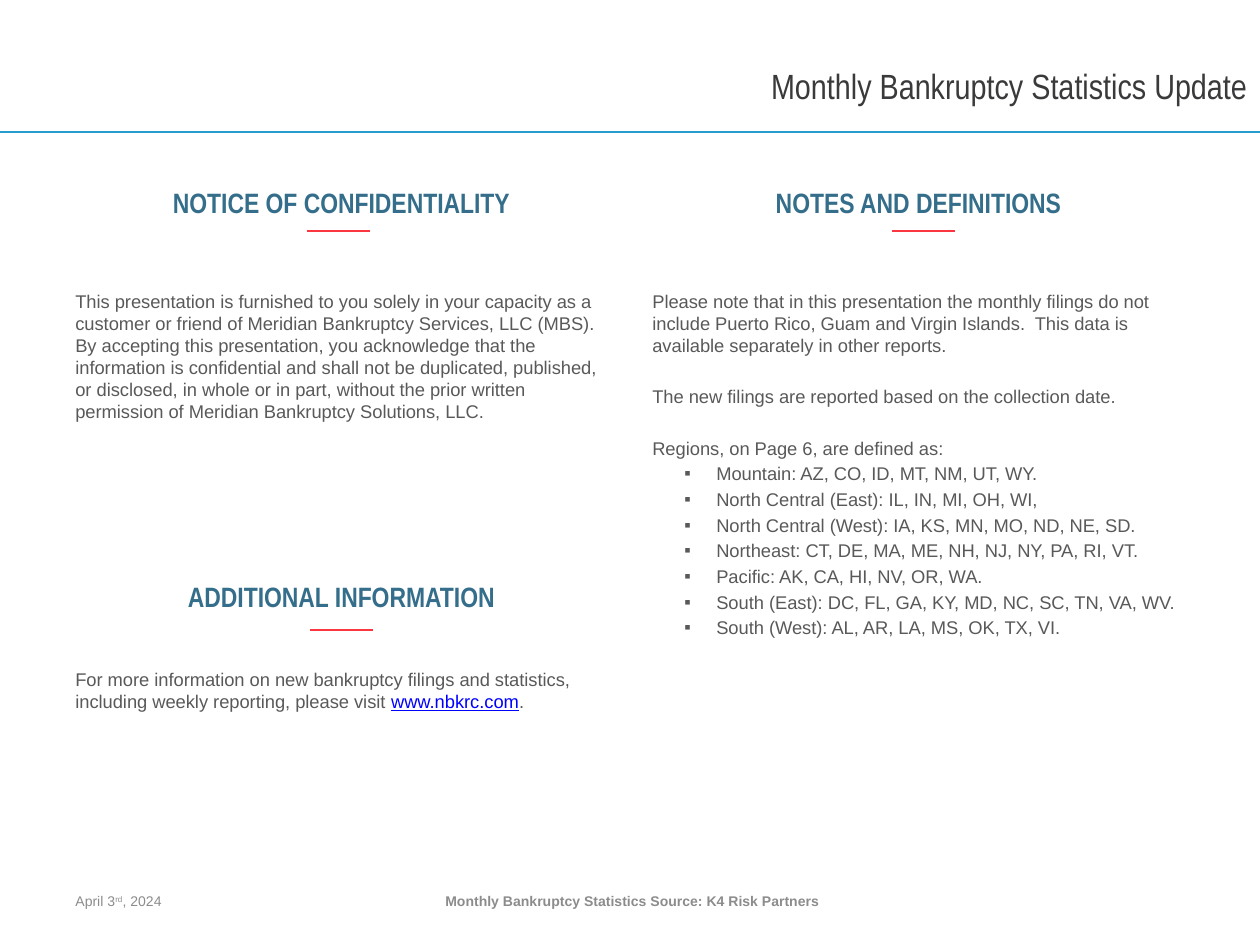
"""Build the notices and definitions slide of the bankruptcy statistics deck."""
from lxml.etree import SubElement
from pptx import Presentation
from pptx.dml.color import RGBColor
from pptx.enum.shapes import MSO_CONNECTOR
from pptx.enum.text import MSO_ANCHOR as Anchor, MSO_AUTO_SIZE as AutoSize, PP_ALIGN as Align
from pptx.oxml.ns import qn
from pptx.util import Inches, Pt

SCALE = Inches(1) / 126
BLUE = RGBColor(0x26, 0x9C, 0xCC)
TEAL = RGBColor(0x35, 0x6E, 0x8B)
RED = RGBColor(0xFA, 0x36, 0x40)
BODY = RGBColor(0x59, 0x59, 0x59)
DARK = RGBColor(0x3A, 0x3A, 0x3C)
GREY = RGBColor(0x8C, 0x8C, 0x8C)
LINK = RGBColor(0x00, 0x00, 0xFF)

LEFT, RIGHT, COLUMN = 63, 640, 557

HEADINGS = [
    ("NOTICE OF CONFIDENTIALITY", LEFT, 158, 307, 231),
    ("NOTES AND DEFINITIONS", RIGHT, 158, 892, 231),
    ("ADDITIONAL INFORMATION", LEFT, 552, 310, 630),
]
CONFIDENTIALITY = (
    "This presentation is furnished to you solely in your capacity as a customer or friend of "
    "Meridian Bankruptcy Services, LLC (MBS).  By accepting this presentation, you acknowledge "
    "that the information is confidential and shall not be duplicated, published, or disclosed, "
    "in whole or in part, without the prior written permission of Meridian Bankruptcy Solutions, LLC."
)
NOTES = [
    "Please note that in this presentation the monthly filings do not include Puerto Rico, Guam "
    "and Virgin Islands.  This data is available separately in other reports.",
    "The new filings are reported based on the collection date.",
    "Regions, on Page 6, are defined as:",
]
REGIONS = [
    "Mountain: AZ, CO, ID, MT, NM, UT, WY.",
    "North Central (East): IL, IN, MI, OH, WI,",
    "North Central (West): IA, KS, MN, MO, ND, NE, SD.",
    "Northeast: CT, DE, MA, ME, NH, NJ, NY, PA, RI, VT.",
    "Pacific: AK, CA, HI, NV, OR, WA.",
    "South (East): DC, FL, GA, KY, MD, NC, SC, TN, VA, WV.",
    "South (West): AL, AR, LA, MS, OK, TX, VI.",
]


def px(length):
    """Turn whole pixels into EMU."""
    return round(length * SCALE)


def add_text(paragraph, text, size=10.5, color=BODY, font="Arial", bold=False,
             underline=False, superscript=False):
    """Append one formatted run to a paragraph."""
    run = paragraph.add_run()
    run.text = text
    run.font.name = font
    run.font.size = Pt(size)
    run.font.bold = bold
    run.font.underline = underline
    run.font.color.rgb = color
    if superscript:
        run.font._element.set("baseline", "30000")


class SlideBuilder:
    """Hold the slide and its style, and add each kind of element."""

    def __init__(self, slide):
        """Keep the slide to draw on."""
        self.slide = slide

    def place(self, shape, box, anchor, align):
        """Position a text shape and return its first paragraph."""
        shape.left, shape.top, shape.width, shape.height = map(px, box)
        frame = shape.text_frame
        frame.word_wrap = True
        frame.auto_size = AutoSize.NONE
        frame.vertical_anchor = anchor
        paragraph = frame.paragraphs[0]
        paragraph.alignment = align
        return paragraph

    def title(self, text, *box):
        """Fill the title placeholder."""
        paragraph = self.place(self.slide.shapes.title, box, Anchor.MIDDLE, Align.RIGHT)
        add_text(paragraph, text, size=20, color=DARK, font="Arial Narrow")

    def text_box(self, *box, anchor=Anchor.TOP, align=Align.LEFT):
        """Add a text box and return its frame."""
        shape = self.slide.shapes.add_textbox(0, 0, 0, 0)
        self.place(shape, box, anchor, align)
        return shape.text_frame

    def line(self, left, right, y, color):
        """Add a horizontal rule."""
        connector = self.slide.shapes.add_connector(
            MSO_CONNECTOR.STRAIGHT, px(left), px(y), px(right), px(y))
        connector.line.color.rgb = color
        connector.line.width = Pt(1.5)
        SubElement(connector._element.spPr, qn("a:effectLst"))

    def heading(self, text, left, top, rule_left, rule_y):
        """Add a section heading with its short rule."""
        frame = self.text_box(left, top, COLUMN, 88, anchor=Anchor.MIDDLE, align=Align.CENTER)
        add_text(frame.paragraphs[0], text, size=16, color=TEAL, font="Arial Narrow", bold=True)
        self.line(rule_left, rule_left + 63, rule_y, RED)

    def bullet(self, frame, text):
        """Append an indented square bullet to a frame."""
        paragraph = frame.add_paragraph()
        paragraph.space_before = Pt(2.1)
        properties = paragraph._p.get_or_add_pPr()
        properties.set("marL", str(px(64)))
        properties.set("indent", str(px(-32)))
        SubElement(properties, qn("a:buFont"), typeface="Arial")
        SubElement(properties, qn("a:buChar"), char="▪")
        add_text(paragraph, text)


def main():
    """Build and save the slide."""
    presentation = Presentation()
    presentation.slide_width, presentation.slide_height = Inches(10), Inches(7.5)
    builder = SlideBuilder(presentation.slides.add_slide(presentation.slide_layouts[5]))

    builder.line(0, 1260, 132, BLUE)
    builder.title("Monthly Bankruptcy Statistics Update", 0, 38, 1260, 94)
    for heading in HEADINGS:
        builder.heading(*heading)

    confidentiality = builder.text_box(LEFT, 284, COLUMN, 252)
    add_text(confidentiality.paragraphs[0], CONFIDENTIALITY)

    notes = builder.text_box(RIGHT, 284, COLUMN, 557)
    for index, note in enumerate(NOTES):
        paragraph = notes.add_paragraph() if index else notes.paragraphs[0]
        if index:
            paragraph.space_before = Pt(16.7)
        add_text(paragraph, note)
    for region in REGIONS:
        builder.bullet(notes, region)

    contact = builder.text_box(LEFT, 662, COLUMN, 179).paragraphs[0]
    add_text(contact, "For more information on new bankruptcy filings and statistics, "
                      "including weekly reporting, please visit ")
    add_text(contact, "www.nbkrc.com", color=LINK, underline=True)
    add_text(contact, ".")

    source = builder.text_box(396, 876, 473, 50, anchor=Anchor.MIDDLE, align=Align.CENTER)
    add_text(source.paragraphs[0], "Monthly Bankruptcy Statistics Source: K4 Risk Partners",
             size=8, color=GREY, bold=True)

    date = builder.text_box(LEFT, 876, 294, 50, anchor=Anchor.MIDDLE).paragraphs[0]
    add_text(date, "April 3", size=8, color=GREY)
    add_text(date, "rd", size=8, color=GREY, superscript=True)
    add_text(date, ", 2024", size=8, color=GREY)

    presentation.save("out.pptx")


if __name__ == "__main__":
    main()
